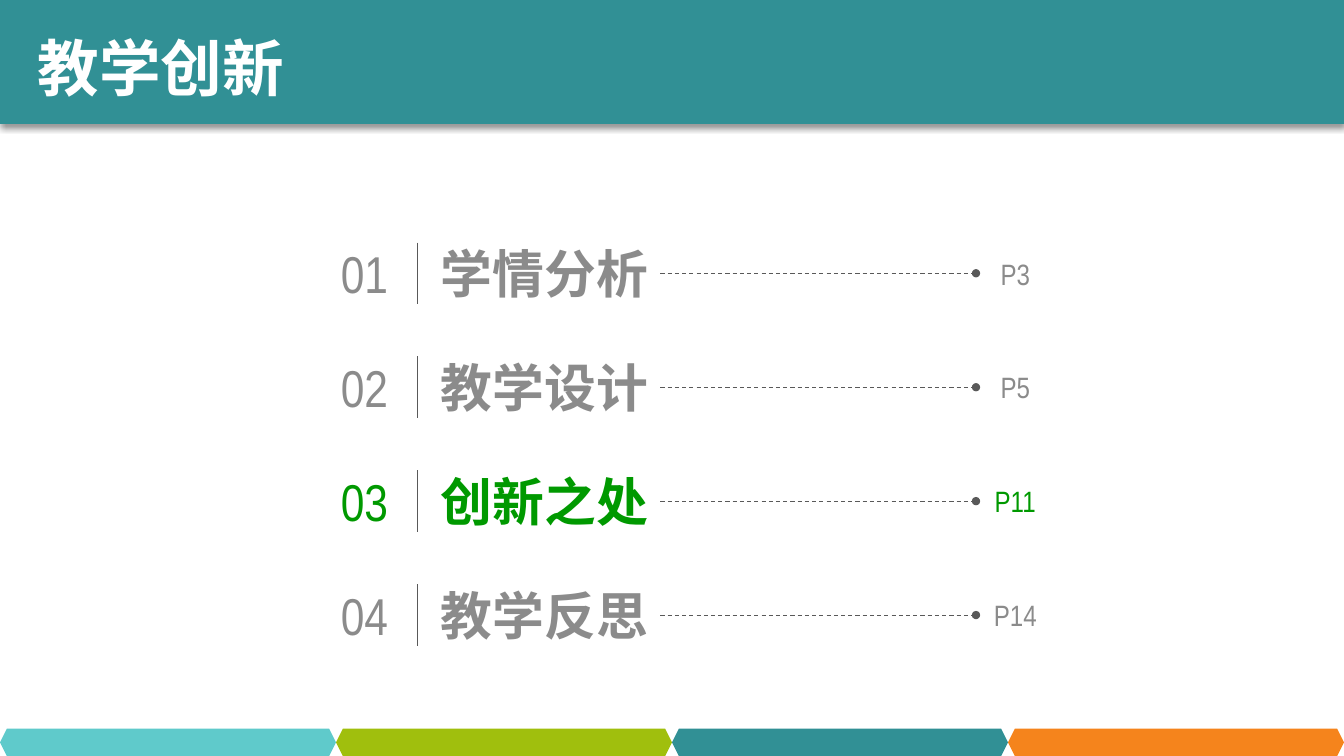
"""Build an agenda slide with four chapters and the third one highlighted."""
from dataclasses import dataclass

from lxml.etree import SubElement
from pptx import Presentation
from pptx.dml.color import RGBColor
from pptx.enum.dml import MSO_LINE
from pptx.enum.shapes import MSO_CONNECTOR, MSO_SHAPE
from pptx.enum.text import MSO_ANCHOR, MSO_AUTO_SIZE, PP_ALIGN
from pptx.oxml.ns import qn
from pptx.shapes.autoshape import Shape
from pptx.shapes.connector import Connector
from pptx.slide import Slide
from pptx.util import Inches, Pt


@dataclass(frozen=True)
class Theme:
    """Colours, fonts and type sizes of the slide."""
    teal: str = "319095"
    aqua: str = "5FCACB"
    lime: str = "A0BF0D"
    amber: str = "F5841C"
    white: str = "FFFFFF"
    grey: str = "8B8B8B"
    green: str = "009900"
    rule: str = "595959"
    latin: str = "Arial Narrow"
    han: str = "Noto Sans CJK SC"
    head: int = 44
    large: int = 37
    small: int = 21
    thin: float = 0.75


@dataclass(frozen=True)
class Item:
    """One chapter of the agenda."""
    name: str
    page: str
    live: bool = False


@dataclass(frozen=True)
class Cell:
    """A text column of the agenda, in percent of the slide."""
    left: float
    width: float
    height: float
    size: int
    font: str
    align: PP_ALIGN
    bold: bool = False


THEME = Theme()
WIDE, HIGH = Inches(13.33), Inches(7.5)
FIRST, STEP = 36.15, 15.07
BAR, MARK = 31.06, 8.13
DASH = (49.14, 72.62)
BAND, FOOT = 16.4, 3.6
CELLS = (
    Cell(23.85, 6.53, 10.13, THEME.large, THEME.latin, PP_ALIGN.CENTER),
    Cell(31.8, 27.53, 10.13, THEME.large, THEME.han, PP_ALIGN.LEFT, True),
    Cell(71.94, 7.2, 6.53, THEME.small, THEME.latin, PP_ALIGN.CENTER),
)
ITEMS = (
    Item("学情分析", "P3"),
    Item("教学设计", "P5"),
    Item("创新之处", "P11", True),
    Item("教学反思", "P14"),
)


def across(share: float) -> int:
    """Turn a percentage of the slide's width into a length."""
    return round(WIDE * share / 100)


def down(share: float) -> int:
    """Turn a percentage of the slide's height into a length."""
    return round(HIGH * share / 100)


def write(shape: Shape, text: str, size: int, font: str, tint: str,
          align: PP_ALIGN, bold: bool) -> None:
    """Write one formatted run, centred on the height of the shape."""
    frame = shape.text_frame
    frame.auto_size = MSO_AUTO_SIZE.NONE
    frame.vertical_anchor = MSO_ANCHOR.MIDDLE
    para = frame.paragraphs[0]
    para.alignment = align
    run = para.add_run()
    run.text = text
    run.font.size = Pt(size)
    run.font.bold = bold
    run.font.name = font
    run.font.color.rgb = RGBColor.from_string(tint)
    for prop in shape.element.iter(qn("a:rPr")):
        SubElement(prop, qn("a:ea"), typeface=font)


def paint(shape: Shape, tint: str) -> None:
    """Give a shape a flat fill with no outline and no shadow."""
    shape.shadow.inherit = False
    shape.fill.solid()
    shape.fill.fore_color.rgb = RGBColor.from_string(tint)
    shape.line.fill.background()


def rule(slide: Slide, start: tuple[float, float],
         end: tuple[float, float]) -> Connector:
    """Draw a thin line between two points given in percent."""
    line = slide.shapes.add_connector(
        MSO_CONNECTOR.STRAIGHT, across(start[0]), down(start[1]),
        across(end[0]), down(end[1]))
    line.line.color.rgb = RGBColor.from_string(THEME.rule)
    line.line.width = Pt(THEME.thin)
    SubElement(line.element.spPr, qn("a:effectLst"))
    return line


def row(slide: Slide, index: int, item: Item) -> None:
    """Draw one chapter with its number, name, leader and page."""
    mid = FIRST + index * STEP
    tint = THEME.green if item.live else THEME.grey
    for cell, text in zip(CELLS, (f"{index + 1:02}", item.name, item.page)):
        box = slide.shapes.add_textbox(
            across(cell.left), down(mid - cell.height / 2),
            across(cell.width), down(cell.height))
        frame = box.text_frame
        frame.word_wrap = True
        frame.margin_left = frame.margin_right = across(1)
        frame.margin_top = frame.margin_bottom = down(0.9)
        write(box, text, cell.size, cell.font, tint, cell.align, cell.bold)
    rule(slide, (BAR, mid - MARK / 2), (BAR, mid + MARK / 2))
    lead = rule(slide, (DASH[0], mid), (DASH[1], mid))
    lead.line.dash_style = MSO_LINE.DASH
    SubElement(lead.element.spPr.find(qn("a:ln")), qn("a:tailEnd"), type="oval")


def header(slide: Slide, text: str) -> None:
    """Draw the shadowed banner and set the title on top of it."""
    band = slide.shapes.add_shape(MSO_SHAPE.RECTANGLE, 0, 0, WIDE, down(BAND))
    paint(band, THEME.teal)
    glow = SubElement(
        band.element.spPr.find(qn("a:effectLst")), qn("a:outerShdw"),
        blurRad=str(Pt(4)), dist=str(Pt(3)), dir="5400000", algn="t",
        rotWithShape="0")
    shade = SubElement(glow, qn("a:srgbClr"), val="000000")
    SubElement(shade, qn("a:alpha"), val="40000")
    title = slide.shapes.title
    title.left, title.top = across(1.95), down(3.2)
    title.width, title.height = across(20.03), down(11.2)
    title.text_frame.word_wrap = False
    write(title, text, THEME.head, THEME.han, THEME.white,
          PP_ALIGN.CENTER, True)
    band.element.addnext(title.element)


def footer(slide: Slide) -> None:
    """Draw the strip of equal coloured hexagons along the bottom."""
    strip = slide.shapes.add_group_shape()
    tints = (THEME.aqua, THEME.lime, THEME.teal, THEME.amber)
    part = 100 / len(tints)
    for index, tint in enumerate(tints):
        tile = strip.shapes.add_shape(
            MSO_SHAPE.HEXAGON, across(index * part), down(100 - FOOT),
            across(part), down(FOOT))
        paint(tile, tint)


def main() -> None:
    """Build the slide and save it."""
    deck = Presentation()
    deck.slide_width, deck.slide_height = WIDE, HIGH
    slide = deck.slides.add_slide(deck.slide_layouts.get_by_name("Title Only"))
    for index, item in enumerate(ITEMS):
        row(slide, index, item)
    header(slide, "教学创新")
    footer(slide)
    deck.save("out.pptx")


if __name__ == "__main__":
    main()
